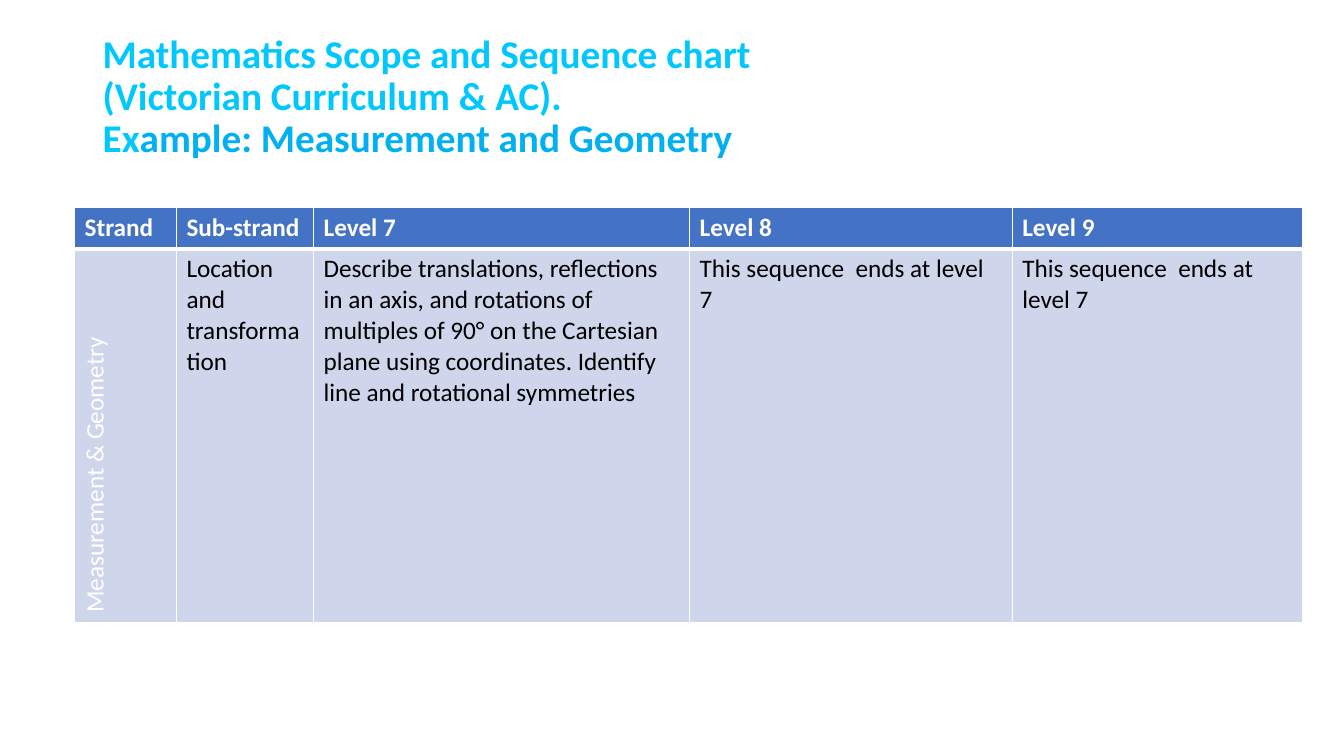
"""Build the mathematics scope and sequence slide."""
from lxml import etree
from pptx import Presentation
from pptx.dml.color import RGBColor as RGB
from pptx.enum.text import MSO_ANCHOR as Anchor
from pptx.oxml.ns import qn
from pptx.util import Inches, Pt


def style(r, color, **formats):
    r.font.color.rgb = RGB.from_string(color)
    for name, value in {"name": "Calibri", **formats}.items():
        setattr(r.font, name, value)


def add_border(tcPr, index, side, width):
    ln = etree.Element(qn(f"a:ln{side}"), w=str(Pt(width)))
    fill = etree.SubElement(ln, qn("a:solidFill"))
    etree.SubElement(fill, qn("a:srgbClr"), val="FFFFFF")
    tcPr.insert(index, ln)


prs = Presentation()
prs.slide_width, prs.slide_height = Inches(13.33), Inches(7.5)
s = prs.slides.add_slide(prs.slide_layouts[6])

title = s.shapes.add_textbox(Inches(0.92), Inches(0.4), Inches(11.5), Inches(1.14))
tf = title.text_frame
tf.word_wrap = True
tf.vertical_anchor = Anchor.MIDDLE
p = tf.paragraphs[0]
p.line_spacing = 0.9
title_lines = [
    [("Mathematics Scope and Sequence chart", "00C8FF")],
    [("(Victorian Curriculum & AC). ", "00C8FF")],
    [("Ex", "00C8FF"), ("ample: Measurement and Geometry", "00B0F0")],
]
for i, line in enumerate(title_lines):
    if i:
        p.add_line_break()
    for text, color in line:
        r = p.add_run()
        r.text = text
        style(r, color, size=Pt(28), bold=True)

rows = [
    ["Strand", "Sub-strand", "Level 7", "Level 8", "Level 9"],
    [
        "Measurement & Geometry",
        "Location and transformation",
        "Describe translations, reflections in an axis, and rotations of multiples "
        "of 90° on the Cartesian plane using coordinates. Identify line and "
        "rotational symmetries",
        "This sequence  ends at level 7",
        "This sequence  ends at level 7",
    ],
]
col_widths = [1.01, 1.36, 3.73, 3.2, 2.88]
row_heights = [0.41, 3.71]
table = s.shapes.add_table(
    len(rows), len(col_widths), Inches(0.74), Inches(2.06),
    Inches(sum(col_widths)), Inches(sum(row_heights)),
).table
for col, width in zip(table.columns, col_widths):
    col.width = Inches(width)
for row, height in zip(table.rows, row_heights):
    row.height = Inches(height)

for i, texts in enumerate(rows):
    header = i == 0
    for j, text in enumerate(texts):
        cell = table.cell(i, j)
        cell.fill.solid()
        cell.fill.fore_color.rgb = RGB.from_string("4472C4" if header else "CFD5EA")
        r = cell.text_frame.paragraphs[0].add_run()
        r.text = text
        color = "FFFFFF" if header or j == 0 else "000000"
        style(r, color, size=Pt(18), bold=header)
        tcPr = cell._tc.get_or_add_tcPr()
        widths = {"L": 1, "R": 1, "T": 1 if header else 3, "B": 3 if header else 1}
        for k, (side, width) in enumerate(widths.items()):
            add_border(tcPr, k, side, width)
table.cell(1, 0)._tc.get_or_add_tcPr().set("vert", "vert270")

prs.save("out.pptx")
